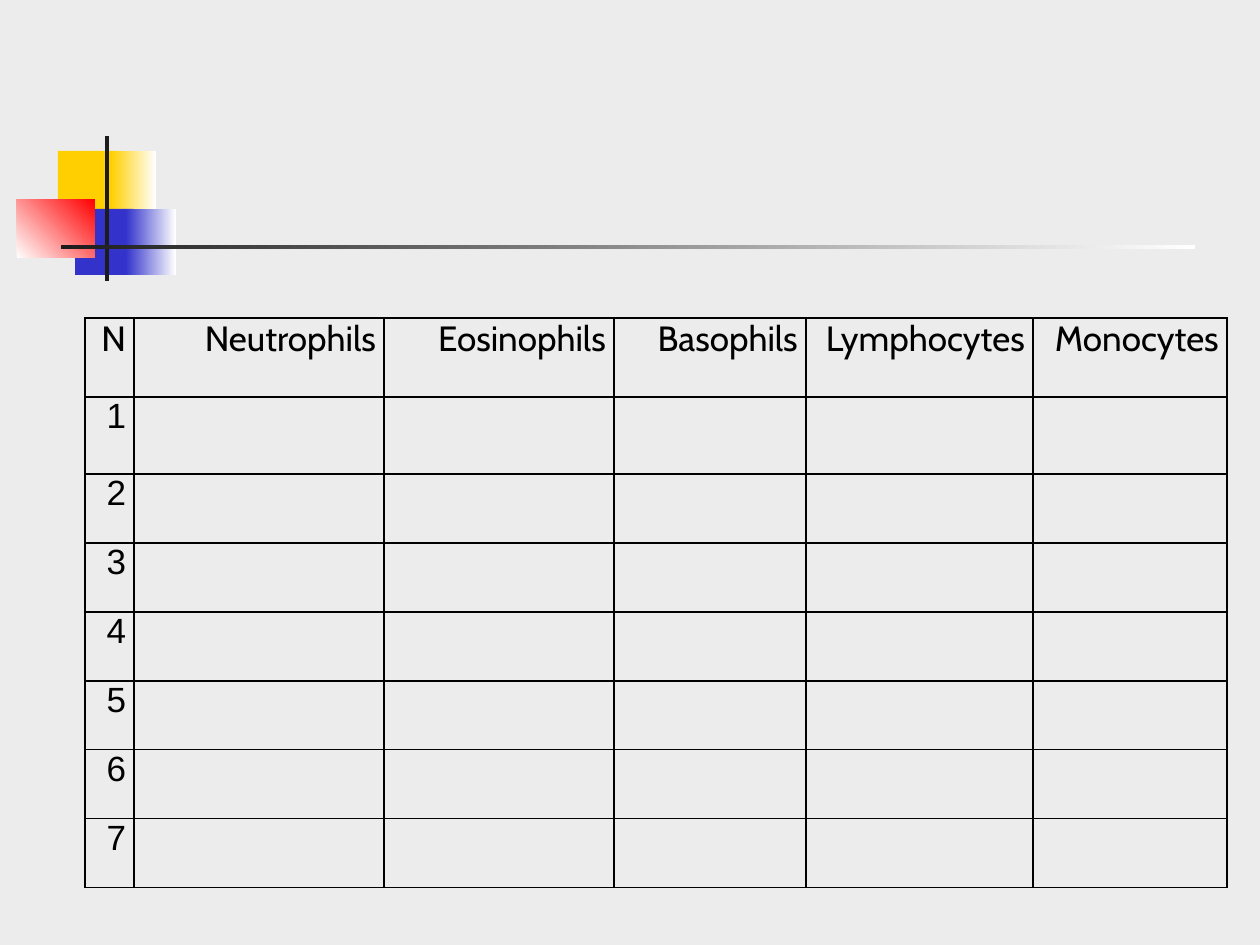
"""Build a slide with a blank blood cell count table and a decorative header."""
from lxml.etree import SubElement
from pptx import Presentation
from pptx.dml.color import RGBColor
from pptx.enum.shapes import MSO_SHAPE
from pptx.enum.text import PP_ALIGN
from pptx.oxml.ns import qn
from pptx.util import Emu, Pt

BACKGROUND = RGBColor(0xEC, 0xEC, 0xEC)
YELLOW = RGBColor(0xFF, 0xCF, 0x01)
BLUE = RGBColor(0x33, 0x33, 0xCC)
RED = RGBColor(0xFF, 0x00, 0x00)
WHITE = RGBColor(0xFF, 0xFF, 0xFF)
DARK = RGBColor(0x1C, 0x1C, 0x1C)
BLACK = RGBColor(0x00, 0x00, 0x00)


def px(length):
    return Emu(round(length * 914400 / 126))


def add_borders(cell):
    properties = cell._tc.get_or_add_tcPr()
    for side in ("a:lnL", "a:lnR", "a:lnT", "a:lnB"):
        line = SubElement(properties, qn(side), w=str(Pt(1)))
        fill = SubElement(line, qn("a:solidFill"))
        SubElement(fill, qn("a:srgbClr"), val=str(BLACK))


presentation = Presentation()
presentation.slide_width = px(1260)
presentation.slide_height = px(945)
slide = presentation.slides.add_slide(presentation.slide_layouts[6])
slide.background.fill.solid()
slide.background.fill.fore_color.rgb = BACKGROUND

decorations = [
    (58, 151, 60, 66, [YELLOW], 0),
    (111, 151, 45, 66, [YELLOW, WHITE], 0),
    (75, 209, 58, 66, [BLUE], 0),
    (126, 209, 50, 66, [BLUE, WHITE], 0),
    (17, 199, 78, 59, [WHITE, RED], 45),
    (105, 136, 4, 145, [DARK], 0),
    (61, 245, 1134, 4, [DARK, WHITE], 0),
]
for left, top, width, height, colors, angle in decorations:
    shape = slide.shapes.add_shape(
        MSO_SHAPE.RECTANGLE, px(left), px(top), px(width), px(height))
    shape.shadow.inherit = False
    shape.line.fill.background()
    if len(colors) == 1:
        shape.fill.solid()
        shape.fill.fore_color.rgb = colors[0]
    else:
        shape.fill.gradient()
        shape.fill.gradient_angle = angle
        for stop, color in zip(shape.fill.gradient_stops, colors):
            stop.color.rgb = color

headers = ["N", "Neutrophils", "Eosinophils", "Basophils", "Lymphocytes", "Monocytes"]
column_widths = [49, 250, 230, 192, 227, 194]
row_heights = [79, 77] + [69] * 6
rows = [headers] + [[str(number)] + [""] * 5 for number in range(1, 8)]

table = slide.shapes.add_table(
    len(rows), len(headers), px(85), px(318),
    px(sum(column_widths)), px(sum(row_heights))).table
table.first_row = False
table.horz_banding = False
for column, width in zip(table.columns, column_widths):
    column.width = px(width)
for row, height in zip(table.rows, row_heights):
    row.height = px(height)

for row, texts in zip(table.rows, rows):
    for cell, text in zip(row.cells, texts):
        add_borders(cell)
        cell.fill.background()
        cell.margin_left = cell.margin_right = px(8)
        cell.margin_top = cell.margin_bottom = 0
        paragraph = cell.text_frame.paragraphs[0]
        paragraph.text = text
        paragraph.alignment = PP_ALIGN.RIGHT
        paragraph._p.get_or_add_pPr().set("rtl", "1")
        for run in paragraph.runs:
            run.font.name = "Cabin"
            run.font.size = Pt(20)
            run.font.color.rgb = BLACK
            SubElement(run.font._element, qn("a:cs"), typeface="Arial")

presentation.save("out.pptx")
